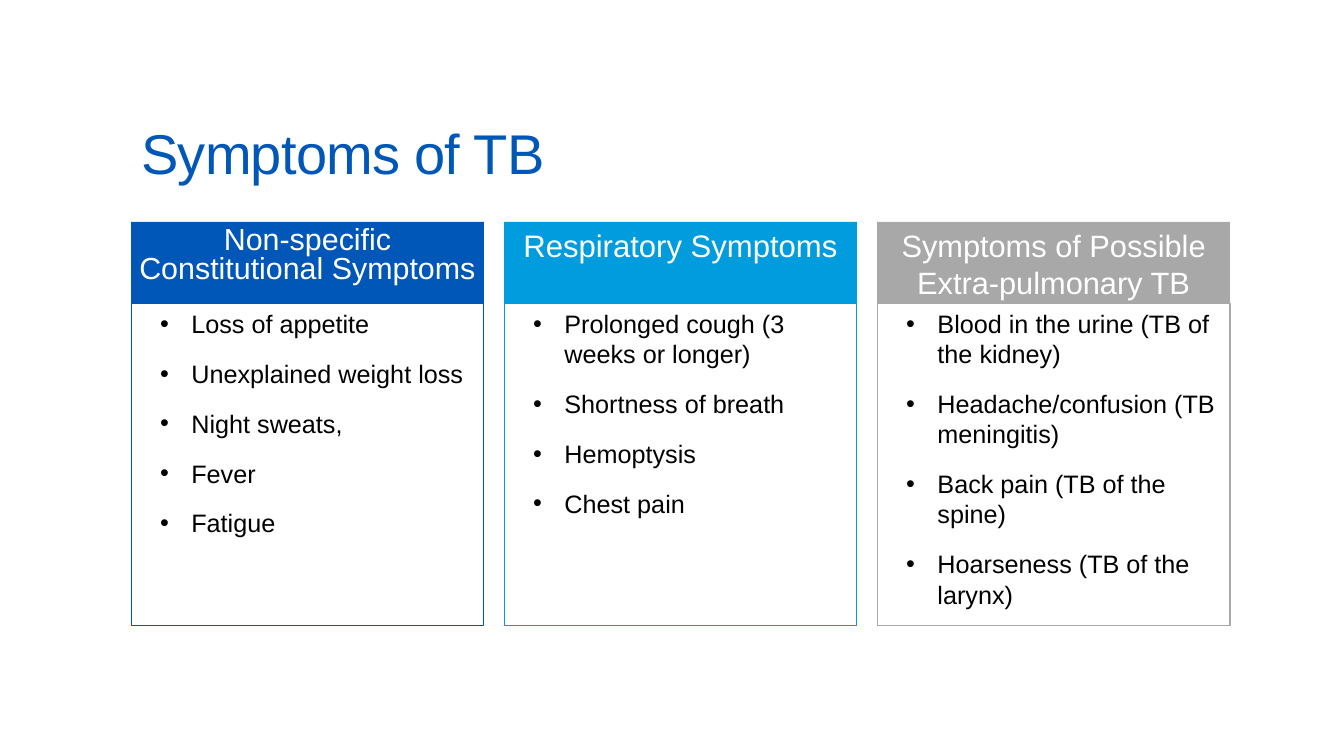
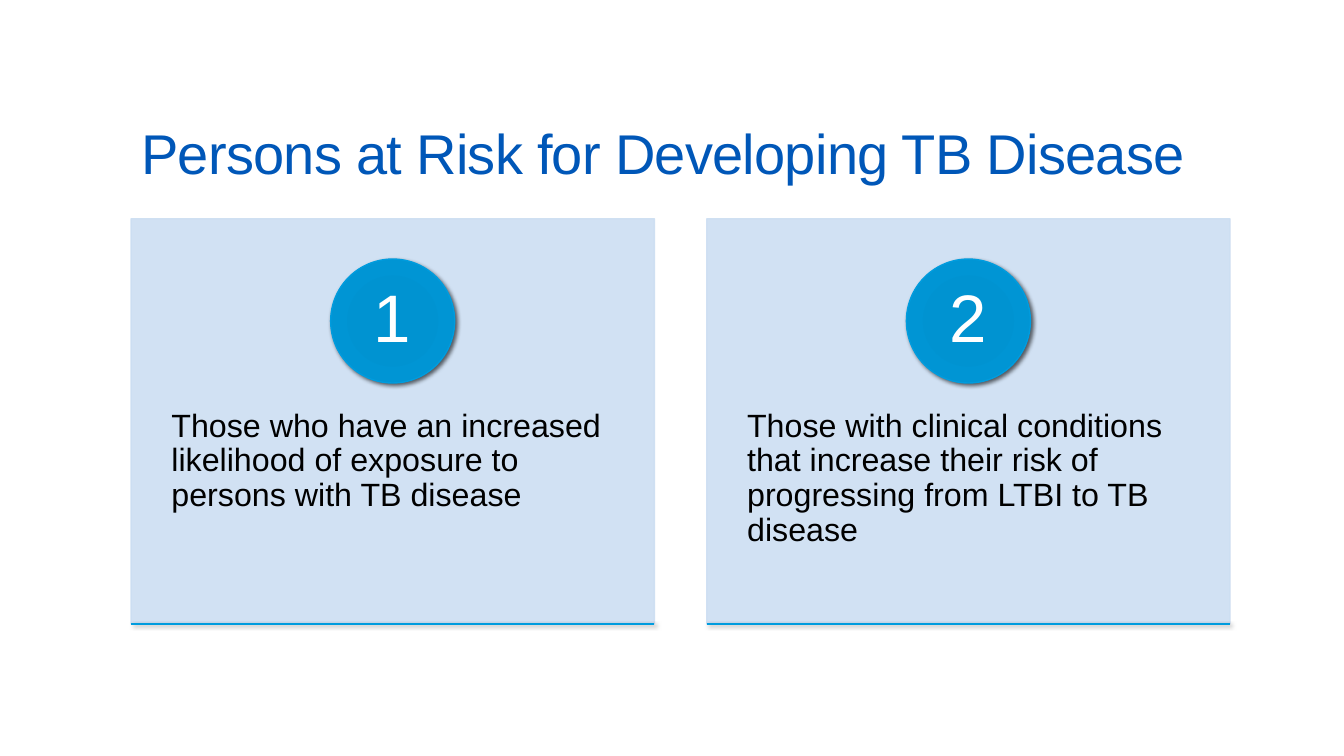
from dataclasses import dataclass

from lxml import etree
from pptx import Presentation
from pptx.dml.color import RGBColor
from pptx.enum.shapes import MSO_CONNECTOR, MSO_SHAPE
from pptx.enum.text import MSO_ANCHOR, MSO_AUTO_SIZE, PP_ALIGN
from pptx.oxml import parse_xml
from pptx.oxml.ns import nsdecls, qn
from pptx.util import Inches, Pt

RECTANGLE, OVAL = MSO_SHAPE.RECTANGLE, MSO_SHAPE.OVAL
STRAIGHT = MSO_CONNECTOR.STRAIGHT
TOP, MIDDLE, BOTTOM = MSO_ANCHOR.TOP, MSO_ANCHOR.MIDDLE, MSO_ANCHOR.BOTTOM
LEFT, CENTER = PP_ALIGN.LEFT, PP_ALIGN.CENTER
NO_AUTOFIT = MSO_AUTO_SIZE.NONE


@dataclass(frozen=True)
class Theme:
    font: str = "Arial"
    blue: str = "0057B8"
    sky: str = "009CDE"
    gray: str = "A8A8A8"
    pale: str = "CCDEF2"
    white: str = "FFFFFF"
    black: str = "000000"
    title_size: float = 40
    header_sizes: tuple = (21.7, 22.2, 22)
    list_size: float = 18
    card_size: float = 23
    number_size: float = 48
    badge_stops: tuple = ((0, "0091CF"), (34, "0093D1"), (70, "0095D4"), (100, "009CDE"))


THEME = Theme()

# Shared grid, in inches
WIDTH, HEIGHT = 13.33, 7.5
MARGIN = 1.3
CONTENT_WIDTH = 10.9
TITLE_TOP, TITLE_HEIGHT = 0.5, 1.4

TITLE_ONLY = 5
BULLET_XML = (
    f'<a:buClr {nsdecls("a")}><a:srgbClr val="{THEME.black}"/></a:buClr>',
    f'<a:buFont {nsdecls("a")} typeface="{THEME.font}"/>',
    f'<a:buChar {nsdecls("a")} char="•"/>',
)
SHADOW_XML = (
    f'<a:effectLst {nsdecls("a")}>'
    f'<a:outerShdw blurRad="{Pt(3)}" dist="{Pt(2)}" dir="{45 * 60000}" algn="tl" rotWithShape="0">'
    f'<a:srgbClr val="{THEME.black}"><a:alpha val="60000"/></a:srgbClr>'
    "</a:outerShdw></a:effectLst>"
)
STOPS_XML = "".join(
    f'<a:gs pos="{stop * 1000}"><a:srgbClr val="{color}"/></a:gs>'
    for stop, color in THEME.badge_stops
)
BADGE_FILL_XML = (
    f'<a:gradFill {nsdecls("a")} rotWithShape="1"><a:gsLst>{STOPS_XML}</a:gsLst>'
    '<a:path path="circle"><a:fillToRect l="100000" t="100000" r="100000" b="100000"/></a:path>'
    "</a:gradFill>"
)


def add_panel(slide, left, top, width, height, fill=None, line=None, weight=0.75):
    """Add a flat rectangle, measured in inches; no colour means no fill or line."""
    panel = slide.shapes.add_shape(RECTANGLE, *map(Inches, (left, top, width, height)))
    panel.shadow.inherit = False
    for paint, color in ((panel.fill, fill), (panel.line.fill, line)):
        if color:
            paint.solid()
            paint.fore_color.rgb = RGBColor.from_string(color)
        else:
            paint.background()
    if line:
        panel.line.width = Pt(weight)
    return panel


def write(frame, texts, size, color, anchor=TOP, align=LEFT, spacing=1.0,
          insets=(0.1, 0.05), bullets=False):
    """Fill a text frame with paragraphs; insets are (sides, top and bottom) in inches."""
    side, edge = map(Inches, insets)
    frame_format = {
        "word_wrap": True, "auto_size": NO_AUTOFIT, "vertical_anchor": anchor,
        "margin_left": side, "margin_right": side,
        "margin_top": edge, "margin_bottom": edge,
    }
    for name, value in frame_format.items():
        setattr(frame, name, value)
    for index, text in enumerate(texts):
        paragraph = frame.add_paragraph() if index else frame.paragraphs[0]
        if bullets:
            properties = paragraph._p.get_or_add_pPr()
            properties.set("marL", str(Inches(0.5)))
            properties.set("indent", str(Inches(-0.31)))
            for xml in BULLET_XML:
                properties.append(parse_xml(xml))
        paragraph_format = {
            "alignment": align, "line_spacing": spacing,
            "space_before": Pt(12 if index else 0),
            "space_after": Pt(2 if bullets else 0),
        }
        for name, value in paragraph_format.items():
            setattr(paragraph, name, value)
        run = paragraph.add_run()
        run.text = text
        run.font.name = THEME.font
        run.font.size = Pt(size)
        run.font.color.rgb = RGBColor.from_string(color)


prs = Presentation()
prs.slide_width, prs.slide_height = Inches(WIDTH), Inches(HEIGHT)

slides = []
for heading in ("Symptoms of TB", "Persons at Risk for Developing TB Disease"):
    slide = prs.slides.add_slide(prs.slide_layouts[TITLE_ONLY])
    title = slide.shapes.title
    title_box = {"left": MARGIN, "top": TITLE_TOP, "width": CONTENT_WIDTH, "height": TITLE_HEIGHT}
    for name, value in title_box.items():
        setattr(title, name, Inches(value))
    write(title.text_frame, [heading], THEME.title_size, THEME.blue, anchor=BOTTOM, spacing=0.9)
    title.text_frame.paragraphs[0].runs[0].font._element.set("spc", "-50")
    slides.append(slide)
symptoms_slide, risk_slide = slides

# Symptoms: three columns, each a header over a list
SYMPTOMS = (
    ("Non-specific Constitutional Symptoms", THEME.blue, 0.8, (0, 0.05),
     ("Loss of appetite", "Unexplained weight loss", "Night sweats,", "Fever", "Fatigue")),
    ("Respiratory Symptoms", THEME.sky, 1.0, (0.1, 0.05),
     ("Prolonged cough (3 weeks or longer)", "Shortness of breath", "Hemoptysis", "Chest pain")),
    ("Symptoms of Possible Extra-pulmonary TB", THEME.gray, 1.0, (0.1, 0.05),
     ("Blood in the urine (TB of the kidney)", "Headache/confusion (TB meningitis)",
      "Back pain (TB of the spine)", "Hoarseness (TB of the larynx)")),
)
COLUMN_GAP = 0.2
COLUMN_WIDTH = (CONTENT_WIDTH - COLUMN_GAP * (len(SYMPTOMS) - 1)) / len(SYMPTOMS)
HEADER_TOP, HEADER_HEIGHT, LIST_HEIGHT = 2.2, 0.81, 3.2

for column, (category, color, spacing, insets, symptoms) in enumerate(SYMPTOMS):
    left = MARGIN + column * (COLUMN_WIDTH + COLUMN_GAP)
    header = add_panel(symptoms_slide, left, HEADER_TOP, COLUMN_WIDTH, HEADER_HEIGHT, fill=color)
    write(header.text_frame, [category], THEME.header_sizes[column], THEME.white,
          align=CENTER, spacing=spacing, insets=insets)
    symptom_list = add_panel(symptoms_slide, left, HEADER_TOP + HEADER_HEIGHT,
                             COLUMN_WIDTH, LIST_HEIGHT, line=color)
    write(symptom_list.text_frame, symptoms, THEME.list_size, THEME.black, bullets=True)

# Risk groups: two numbered cards
RISK_GROUPS = (
    "Those who have an increased likelihood of exposure to persons with TB disease",
    "Those with clinical conditions that increase their risk of progressing from LTBI to TB disease",
)
CARD_GAP = 0.52
CARD_WIDTH = (CONTENT_WIDTH - CARD_GAP * (len(RISK_GROUPS) - 1)) / len(RISK_GROUPS)
CARD_TOP, CARD_HEIGHT = 2.17, 4.02
BADGE_TOP, BADGE_SIZE = 2.57, 1.23
GROUP_TOP, GROUP_HEIGHT = 3.7, 2.41

for column, group in enumerate(RISK_GROUPS):
    left = MARGIN + column * (CARD_WIDTH + CARD_GAP)
    card = add_panel(risk_slide, left, CARD_TOP, CARD_WIDTH, CARD_HEIGHT,
                     fill=THEME.pale, line=THEME.pale, weight=1)
    for color in card._element.spPr.iter(qn("a:srgbClr")):
        etree.SubElement(color, qn("a:alpha")).set("val", "90000")

    description = risk_slide.shapes.add_textbox(
        *map(Inches, (left, GROUP_TOP, CARD_WIDTH, GROUP_HEIGHT)))
    write(description.text_frame, [group], THEME.card_size, THEME.black,
          spacing=0.9, insets=(0.4, 0.36))

    badge_left = left + (CARD_WIDTH - BADGE_SIZE) / 2
    badge = risk_slide.shapes.add_shape(
        OVAL, *map(Inches, (badge_left, BADGE_TOP, BADGE_SIZE, BADGE_SIZE)))
    badge._element.spPr.append(parse_xml(BADGE_FILL_XML))
    write(badge.text_frame, [str(column + 1)], THEME.number_size, THEME.white,
          anchor=MIDDLE, align=CENTER, spacing=0.9, insets=(0.09, 0.01))

    card_bottom = CARD_TOP + CARD_HEIGHT
    base_line = risk_slide.shapes.add_connector(
        STRAIGHT, *map(Inches, (left, card_bottom, left + CARD_WIDTH, card_bottom)))
    for accent in (badge, base_line):
        accent.line.color.rgb = RGBColor.from_string(THEME.sky)
        accent.line.width = Pt(1)
        accent._element.spPr.append(parse_xml(SHADOW_XML))

prs.save("out.pptx")
